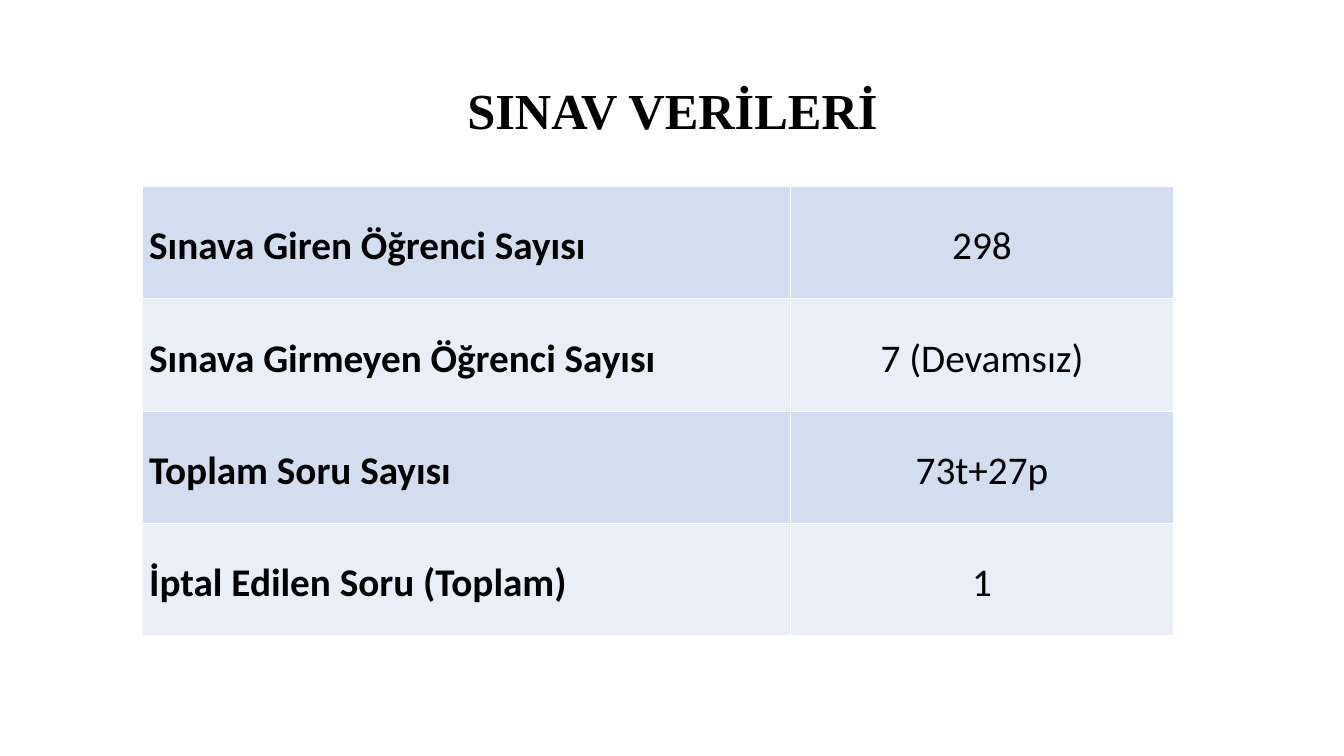
from lxml.etree import SubElement
from pptx import Presentation
from pptx.dml.color import RGBColor
from pptx.enum.text import MSO_ANCHOR as Anchor, PP_ALIGN as Align
from pptx.oxml.ns import qn
from pptx.util import Inches, Pt

BLACK = RGBColor(0x00, 0x00, 0x00)
WHITE = RGBColor(0xFF, 0xFF, 0xFF)
BANDS = (RGBColor(0xD2, 0xDE, 0xEF), RGBColor(0xEA, 0xEF, 0xF7))

TITLE_BOX = (0.92, 0.4, 11.5, 1.45)
TABLE_BOX = (1.41, 1.85, 10.23, 4.46)
LABEL_WIDTH = 6.43

EXAM_DATA = (
    ("Sınava Giren Öğrenci Sayısı", "298"),
    ("Sınava Girmeyen Öğrenci Sayısı", "7 (Devamsız)"),
    ("Toplam Soru Sayısı", "73t+27p"),
    ("İptal Edilen Soru (Toplam)", "1"),
)


def write(frame, text, font, size, bold, align, spacing):
    frame.text = text
    para = frame.paragraphs[0]
    para.alignment = align
    para.line_spacing = spacing
    span = para.runs[0].font
    span.name, span.size, span.bold = font, Pt(size), bold
    span.color.rgb = BLACK


def add_borders(cell):
    """Draw a thin white line on all four sides; call before filling the cell."""
    properties = cell._tc.get_or_add_tcPr()
    for side in ("lnL", "lnR", "lnT", "lnB"):
        line = SubElement(properties, qn(f"a:{side}"), w=str(Pt(1)))
        fill = SubElement(line, qn("a:solidFill"))
        SubElement(fill, qn("a:srgbClr"), val=str(WHITE))


def add_title(page, box, text):
    frame = page.shapes.add_textbox(*map(Inches, box)).text_frame
    frame.word_wrap = True
    frame.vertical_anchor = Anchor.MIDDLE
    write(frame, text, "Times New Roman", 36, True, Align.CENTER, 0.9)


def add_exam_table(page, box, data):
    table = page.shapes.add_table(len(data), 2, *map(Inches, box)).table
    table.first_row = table.horz_banding = False
    table.columns[0].width = Inches(LABEL_WIDTH)
    table.columns[1].width = Inches(box[2] - LABEL_WIDTH)
    for row, texts in enumerate(data):
        for column, text in enumerate(texts):
            cell = table.cell(row, column)
            is_label = column == 0
            cell.vertical_anchor = Anchor.MIDDLE
            cell.margin_left = cell.margin_right = Inches(0.07)
            cell.margin_top = cell.margin_bottom = 0
            add_borders(cell)
            cell.fill.solid()
            cell.fill.fore_color.rgb = BANDS[row % 2]
            align = Align.LEFT if is_label else Align.CENTER
            write(cell.text_frame, text, "Calibri", 28, is_label, align, 1.15)


def main():
    deck = Presentation()
    deck.slide_width, deck.slide_height = Inches(13.33), Inches(7.5)
    page = deck.slides.add_slide(deck.slide_layouts[6])
    add_title(page, TITLE_BOX, "SINAV VERİLERİ")
    add_exam_table(page, TABLE_BOX, EXAM_DATA)
    deck.save("out.pptx")


if __name__ == "__main__":
    main()
